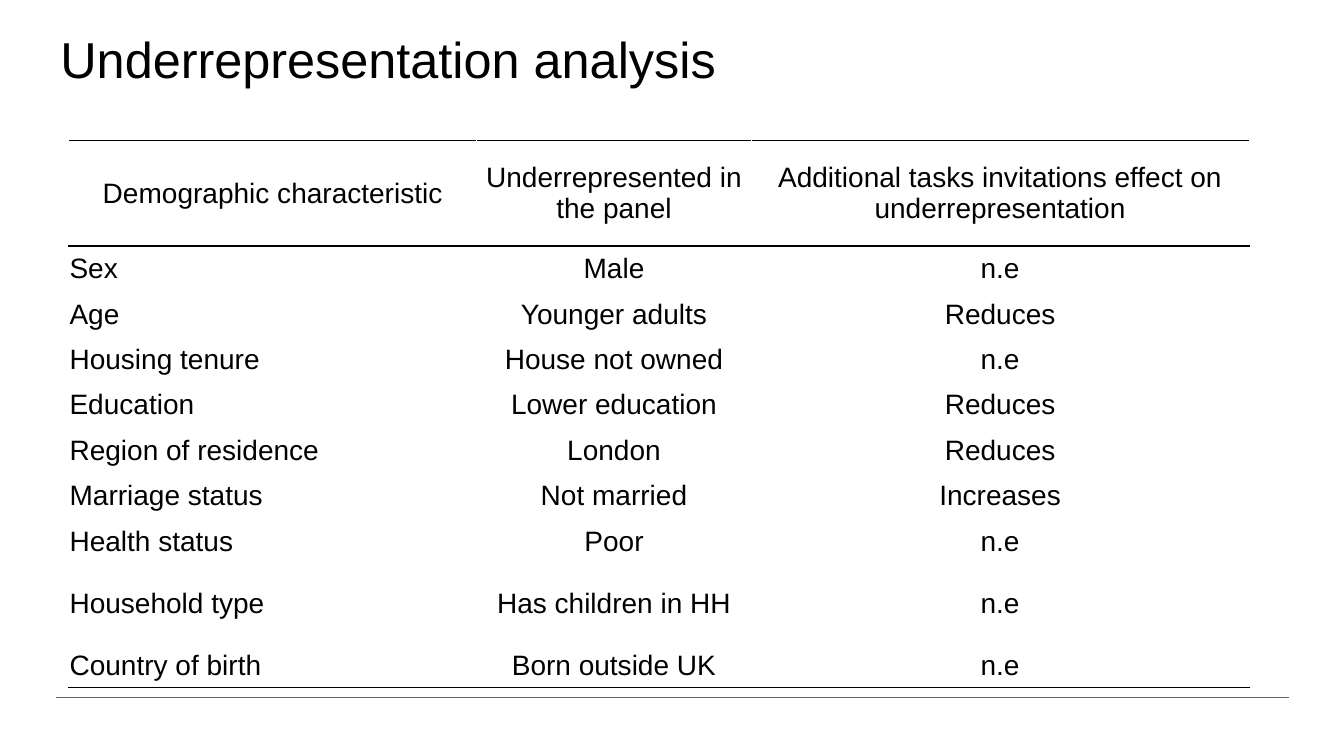
from lxml import etree
from pptx import Presentation
from pptx import util as u
from pptx.dml.color import RGBColor
from pptx.enum import shapes, text
from pptx.oxml.ns import qn

PX = 9144  # EMU per px, 100 px to the inch
FONT = "Arial"
BLACK = RGBColor(0x00, 0x00, 0x00)
WHITE = RGBColor(0xFF, 0xFF, 0xFF)
GREY = RGBColor(0x62, 0x64, 0x64)

COL_WIDTHS = [405, 272, 494]
ROW_HEIGHTS = [105] + [45] * 7 + [78, 45]
ROWS = [
    ("Demographic characteristic", "Underrepresented in the panel",
     "Additional tasks invitations effect on underrepresentation"),
    ("Sex", "Male", "n.e"),
    ("Age", "Younger adults", "Reduces"),
    ("Housing tenure", "House not owned", "n.e"),
    ("Education", "Lower education", "Reduces"),
    ("Region of residence", "London", "Reduces"),
    ("Marriage status", "Not married", "Increases"),
    ("Health status", "Poor", "n.e"),
    ("Household type", "Has children in HH", "n.e"),
    ("Country of birth", "Born outside UK", "n.e"),
]


def px(n):
    return u.Emu(n * PX)


def style_font(font, size):
    font.name = FONT
    font.size = u.Pt(size)
    font.color.rgb = BLACK


def set_border(cell, side, color):
    tc_pr = cell._tc.get_or_add_tcPr()
    ln = etree.SubElement(tc_pr, qn(f"a:ln{side}"), w=str(u.Pt(1)))
    fill = etree.SubElement(ln, qn("a:solidFill"))
    etree.SubElement(fill, qn("a:srgbClr"), val=str(color))


def add_footer_rule(s, x, y, w):
    rule = s.shapes.add_connector(
        shapes.MSO_CONNECTOR.STRAIGHT, px(x), px(y), px(x + w), px(y))
    rule.line.color.rgb = GREY
    rule.line.width = u.Pt(0.5)
    etree.SubElement(rule._element.spPr, qn("a:effectLst"))


def add_title(s, x, y, w, h):
    tf = s.shapes.add_textbox(px(x), px(y), px(w), px(h)).text_frame
    tf.word_wrap = True
    tf.text = "Underrepresentation analysis"
    p = tf.paragraphs[0]
    p.line_spacing = 0.9
    style_font(p.runs[0].font, 36)


def fill_cell(cell, label, row, col):
    # Rules run above and below the header and under the last row
    last = len(ROWS) - 1
    set_border(cell, "L", WHITE)
    set_border(cell, "R", WHITE)
    set_border(cell, "T", BLACK if row <= 1 else WHITE)
    set_border(cell, "B", BLACK if row in (0, last) else WHITE)
    cell.fill.solid()
    cell.fill.fore_color.rgb = WHITE

    cell.margin_left = cell.margin_right = cell.margin_top = px(1)
    cell.margin_bottom = 0
    cell.vertical_anchor = text.MSO_ANCHOR.MIDDLE
    cell.text = label
    p = cell.text_frame.paragraphs[0]
    centred = row == 0 or col > 0
    p.alignment = text.PP_ALIGN.CENTER if centred else text.PP_ALIGN.LEFT
    style_font(p.runs[0].font, 20)


def add_analysis_table(s, x, y):
    frame = s.shapes.add_table(
        len(ROWS), len(COL_WIDTHS), px(x), px(y),
        px(sum(COL_WIDTHS)), px(sum(ROW_HEIGHTS)))
    table = frame.table
    table.first_row = table.horz_banding = False
    for column, width in zip(table.columns, COL_WIDTHS):
        column.width = px(width)
    for i, (labels, height) in enumerate(zip(ROWS, ROW_HEIGHTS)):
        table.rows[i].height = px(height)
        for j, label in enumerate(labels):
            fill_cell(table.cell(i, j), label, i, j)


def main():
    prs = Presentation()
    prs.slide_width, prs.slide_height = px(1333), px(750)
    s = prs.slides.add_slide(prs.slide_layouts[6])
    add_footer_rule(s, 56, 692, 1222)
    add_title(s, 50, 30, 1091, 125)
    add_analysis_table(s, 68, 139)
    prs.save("out.pptx")


if __name__ == "__main__":
    main()
